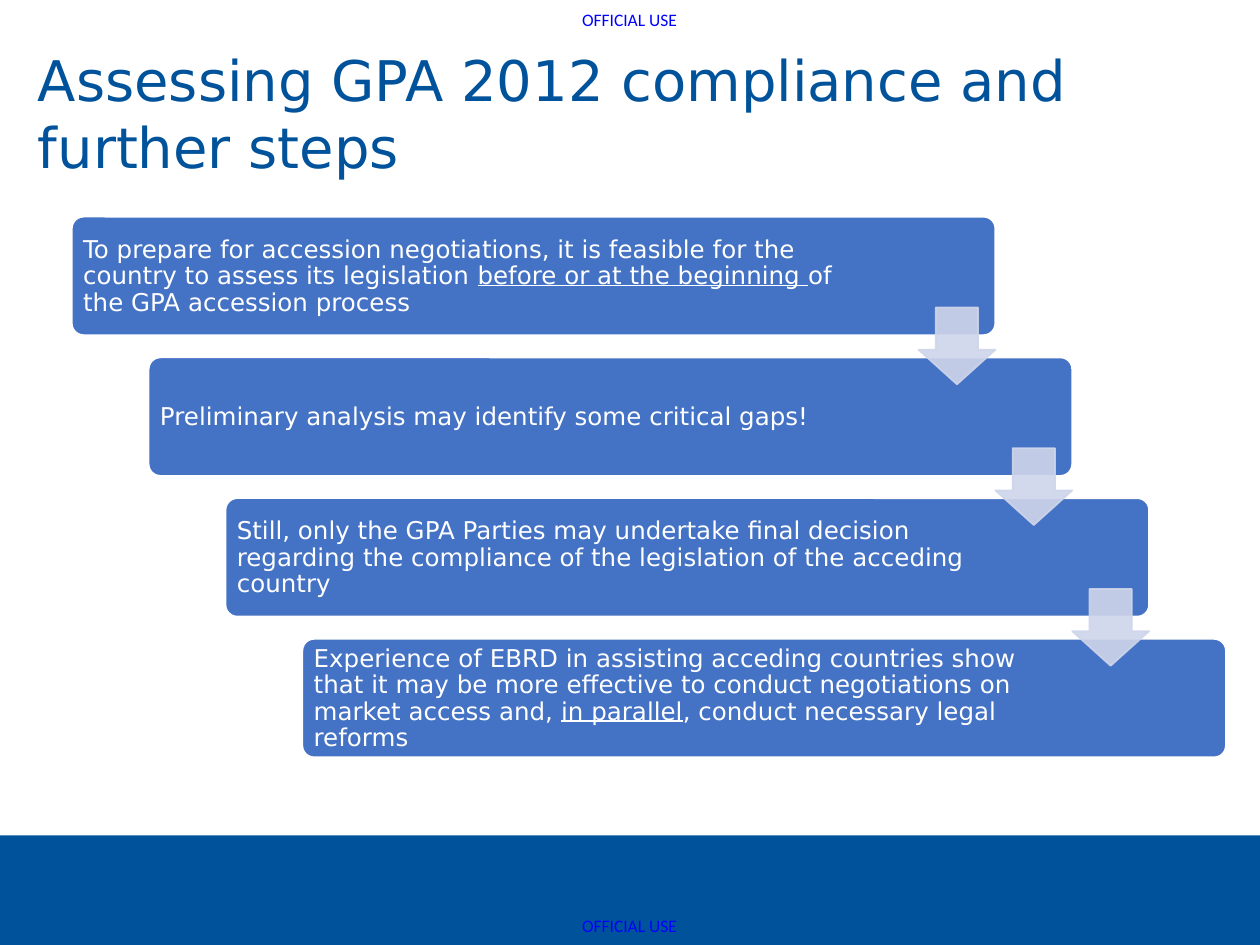
from lxml import etree
from pptx import Presentation
from pptx.dml.color import RGBColor
from pptx.enum.shapes import MSO_SHAPE
from pptx.enum.text import MSO_ANCHOR, PP_ALIGN
from pptx.oxml.ns import qn
from pptx.util import Inches, Pt

RECTANGLE, ROUNDED, DOWN_ARROW = MSO_SHAPE.RECTANGLE, MSO_SHAPE.ROUNDED_RECTANGLE, MSO_SHAPE.DOWN_ARROW
TOP, MIDDLE, LEFT = MSO_ANCHOR.TOP, MSO_ANCHOR.MIDDLE, PP_ALIGN.LEFT
NAVY, BLUE, PALE, WHITE, MARK = "00539B", "4472C4", "CFD5EA", "FFFFFF", "0000FF"

# Staircase grid, in inches
STEP_LEFT, STEP_TOP = 0.57, 1.72
STEP_RIGHT, STEP_DOWN = 0.61, 1.117
STEP_WIDTH, STEP_HEIGHT = 7.33, 0.94
ARROW_SIZE = 0.61

# Each step: text width, then (words, underlined) pieces
STEPS = [
    (6.23, [("To prepare for accession negotiations, it is feasible for the country "
             "to assess its legislation ", False),
            ("before or at the beginning ", True),
            ("of the GPA accession process", False)]),
    (6.05, [("Preliminary analysis may identify some critical gaps!", False)]),
    (6.06, [("Still, only the GPA Parties may undertake final decision regarding "
             "the compliance of the legislation of the acceding country", False)]),
    (6.05, [("Experience of EBRD in assisting acceding countries show that it may be "
             "more effective to conduct negotiations on market access and, ", False),
            ("in parallel", True),
            (", conduct necessary legal reforms", False)]),
]


def color(value):
    return RGBColor.from_string(value)


def add_block(kind, left, top, width, height, fill, line=None):
    shape = page.shapes.add_shape(kind, Inches(left), Inches(top), Inches(width), Inches(height))
    shape.shadow.inherit = False
    shape.fill.solid()
    shape.fill.fore_color.rgb = color(fill)
    if line:
        shape.line.color.rgb = color(line)
        shape.line.width = Pt(1)
    else:
        shape.line.fill.background()
    return shape


deck = Presentation()
deck.slide_width, deck.slide_height = Inches(10), Inches(7.5)
page = deck.slides.add_slide(deck.slide_layouts[5])

# Footer band and classification marks
add_block(RECTANGLE, 0, 6.63, 10, 0.87, NAVY)
for top in (0.07, 7.26):
    box = page.shapes.add_textbox(Inches(4.62), Inches(top), Inches(0.79), Inches(0.17))
    frame = box.text_frame
    frame.margin_left = frame.margin_right = frame.margin_top = frame.margin_bottom = 0
    para = frame.paragraphs[0]
    para.text = "OFFICIAL USE"
    para.font.name, para.font.size = "Calibri", Pt(10)
    para.font.color.rgb = color(MARK)

# Steps
for index, (text_width, pieces) in enumerate(STEPS):
    left = STEP_LEFT + index * STEP_RIGHT
    top = STEP_TOP + index * STEP_DOWN
    panel = add_block(ROUNDED, left, top, STEP_WIDTH, STEP_HEIGHT, BLUE, WHITE)
    panel.adjustments[0] = 0.1
    box = page.shapes.add_textbox(Inches(left + 0.03), Inches(top + 0.03),
                                  Inches(text_width), Inches(0.89))
    frame = box.text_frame
    frame.word_wrap = True
    frame.vertical_anchor = MIDDLE
    frame.margin_left = frame.margin_right = frame.margin_top = frame.margin_bottom = Inches(0.06)
    para = frame.paragraphs[0]
    para.line_spacing = 0.9
    para.font.name, para.font.size = "DejaVu Sans", Pt(14)
    para.font.color.rgb = color(WHITE)
    for words, underlined in pieces:
        span = para.add_run()
        span.text = words
        if underlined:
            span.font.underline = True

# Translucent arrows from each step to the next
for index in range(len(STEPS) - 1):
    arrow = add_block(DOWN_ARROW, STEP_LEFT + STEP_WIDTH - ARROW_SIZE + index * STEP_RIGHT,
                      STEP_TOP + 0.72 + index * STEP_DOWN, ARROW_SIZE, ARROW_SIZE, PALE, PALE)
    arrow.adjustments[0], arrow.adjustments[1] = 0.55, 0.45
    for paint in arrow._element.spPr.iter(qn("a:srgbClr")):
        etree.SubElement(paint, qn("a:alpha")).set("val", "90000")

# Title
title = page.shapes.title
title.left, title.top, title.width, title.height = Inches(0.2), Inches(0.31), Inches(9.36), Inches(1.18)
title.text_frame.vertical_anchor = TOP
para = title.text_frame.paragraphs[0]
para.text = "Assessing GPA 2012 compliance and further steps"
para.alignment = LEFT
para.font.name, para.font.size = "DejaVu Sans", Pt(32)
para.font.color.rgb = color(NAVY)

deck.save("out.pptx")
